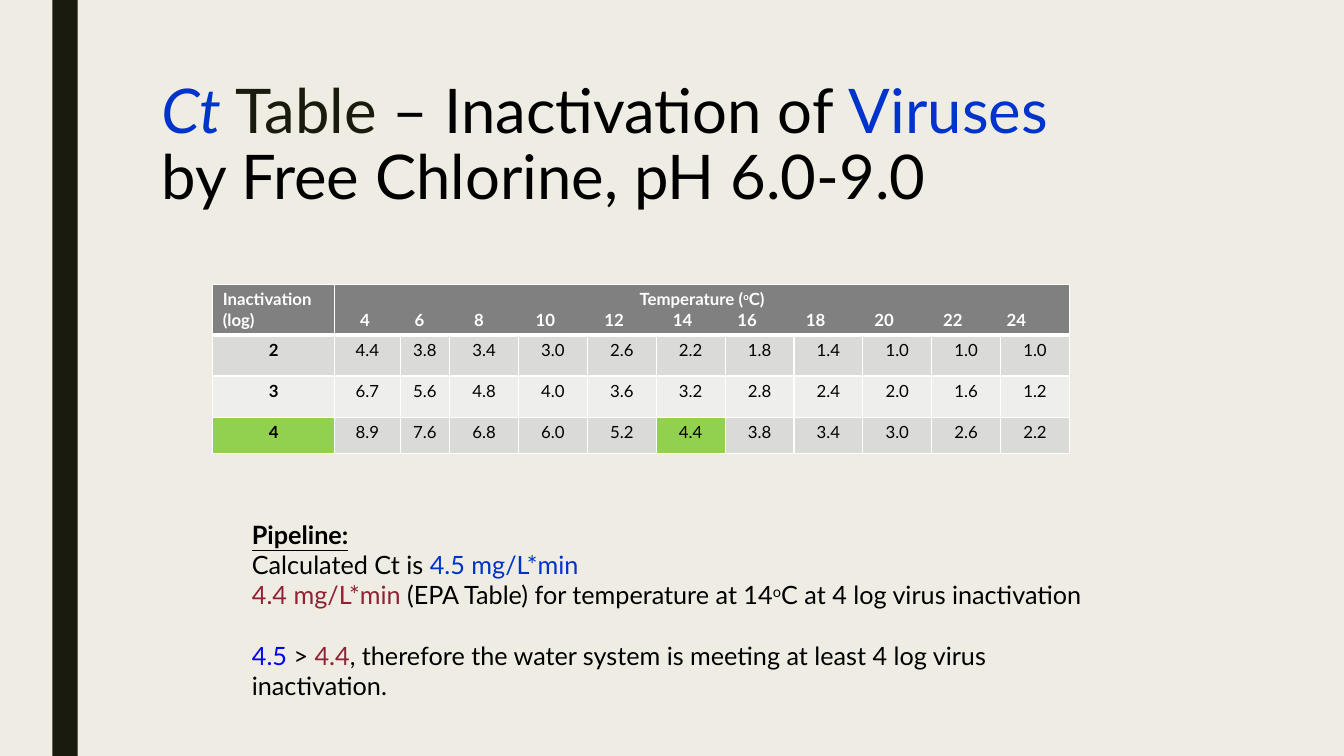
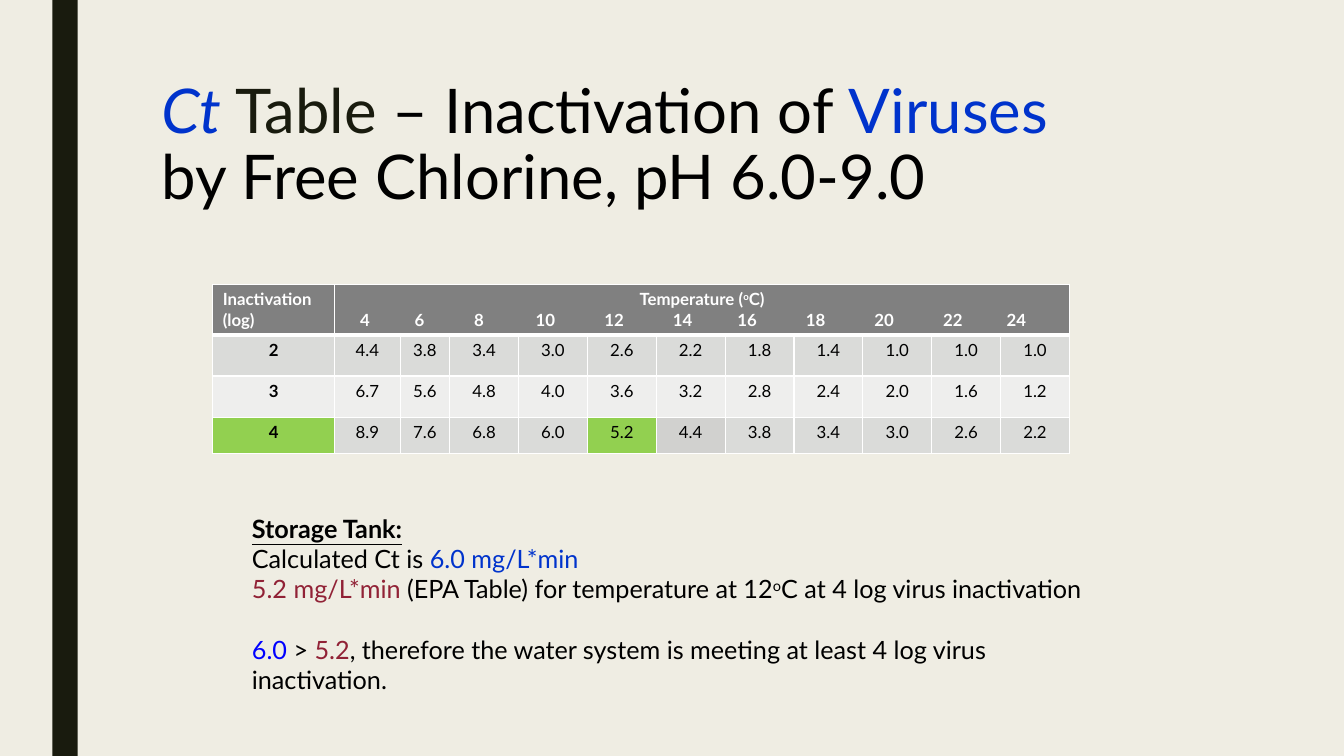
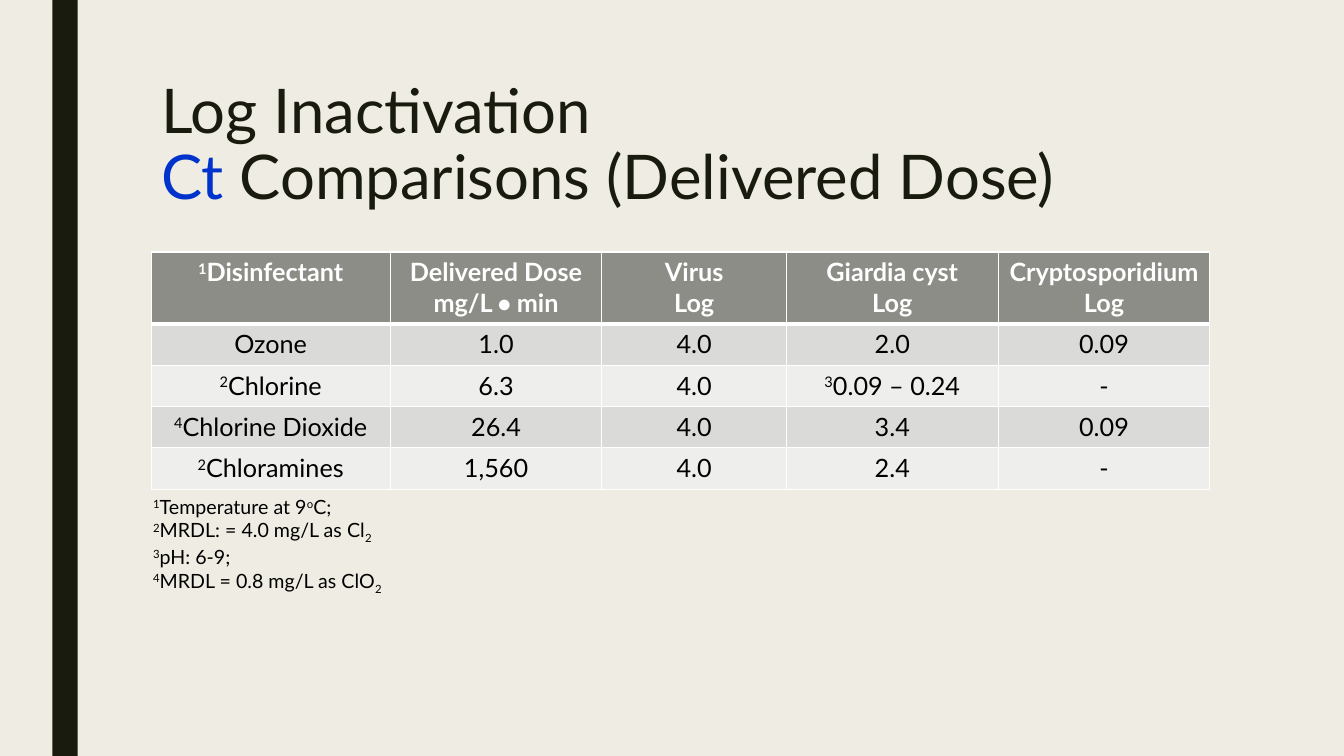
"""Build three slides on Ct values and log inactivation."""
from lxml.etree import SubElement
from pptx import Presentation
from pptx.dml.color import RGBColor
from pptx.enum.shapes import MSO_SHAPE as Shape
from pptx.enum.text import MSO_ANCHOR as Anchor, MSO_AUTO_SIZE as Auto, PP_ALIGN as Align
from pptx.oxml.ns import qn
from pptx.util import Inches, Pt

hue = RGBColor.from_string
DARK, BLACK, WHITE = "191B0E", "000000", "FFFFFF"
GREY, PALE, GREEN = "DADBD9", "EEEEED", "92D050"
BLUE, RED, INK = {"color": "0033CC"}, {"color": "912236"}, {"color": BLACK}
SUP, SUB = {"base": "30000"}, {"base": "-25000"}


def write(frame, lines, align=Align.LEFT, **base):
    """Fill a text frame with lines made of strings and (string, format) pairs."""
    for n, line in enumerate(lines):
        para = frame.paragraphs[0] if n == 0 else frame.add_paragraph()
        para.alignment = align
        for part in [line] if isinstance(line, str) else line:
            if part == "\n":
                para.add_line_break()
                continue
            text, form = (part, {}) if isinstance(part, str) else part
            run = para.add_run()
            run.text = text
            for key, val in {"name": "Lato", **base, **form}.items():
                if key == "color":
                    run.font.color.rgb = hue(val)
                elif key == "base":
                    run._r.get_or_add_rPr().set("baseline", val)
                else:
                    setattr(run.font, key, val)


def grid(slide, spot, cols, rows, head):
    """Add a table with white borders, a header fill and banded rows."""
    size = [Inches(v) for v in (*spot, sum(cols), sum(rows))]
    table = slide.shapes.add_table(len(rows), len(cols), *size).table
    table.first_row = table.horz_banding = False
    for col, wide in zip(table.columns, cols):
        col.width = Inches(wide)
    for r, high in enumerate(rows):
        table.rows[r].height = Inches(high)
        for cell in table.rows[r].cells:
            props = cell._tc.get_or_add_tcPr()
            for side in "LRTB":
                thick = (r, side) in ((0, "B"), (1, "T"))
                line = SubElement(props, qn("a:ln" + side), w=str(Pt(3 if thick else 1)))
                SubElement(SubElement(line, qn("a:solidFill")), qn("a:srgbClr"), val=WHITE)
            cell.fill.solid()
            cell.fill.fore_color.rgb = hue(head if r == 0 else GREY if r % 2 else PALE)
    return table


prs = Presentation()
prs.slide_width, prs.slide_height = Inches(13.33), Inches(7.5)
master, layout = prs.slide_master, prs.slide_layouts[5]
master.background.fill.solid()
master.background.fill.fore_color.rgb = hue("EFEDE3")
spot = {"left": 1.5, "top": 0.75, "width": 10.5, "height": 1.62}
for key, val in spot.items():
    setattr(layout.placeholders[0], key, Inches(val))

virus = [[("Ct ", {**BLUE, "italic": True}), "Table ", ("– Inactivation of ", INK),
          ("Viruses", BLUE), "\n", ("by Free Chlorine, pH 6.0-9.0", INK)]]
dose = [["Log Inactivation ", "\n", ("Ct", BLUE), " Comparisons (Delivered Dose)"]]
slides = []
for title in (virus, virus, dose):
    slide = prs.slides.add_slide(layout)
    frame = slide.shapes.title.text_frame
    frame.auto_size, frame.vertical_anchor = Auto.NONE, Anchor.TOP
    write(frame, title, size=Pt(44), color=DARK)
    frame.paragraphs[0].line_spacing = 0.89
    slides.append(slide)

band = slides[0].shapes.add_shape(Shape.RECTANGLE, Inches(0.52), 0, Inches(0.25), Inches(7.5))
band.shadow.inherit = False
band.fill.solid()
band.fill.fore_color.rgb = hue(DARK)
band.line.fill.background()
master.shapes._spTree.append(band._element)

cols = [1.21, 0.65, 0.49] + [6.15 / 9] * 9
temps = range(4, 25, 2)
stops = [0.2, 0.74, 1.33, 1.99, 2.67, 3.35, 3.99, 4.67, 5.35, 6.03, 6.66]
logs = ["2 4.4 3.8 3.4 3.0 2.6 2.2 1.8 1.4 1.0 1.0 1.0",
        "3 6.7 5.6 4.8 4.0 3.6 3.2 2.8 2.4 2.0 1.6 1.2",
        "4 8.9 7.6 6.8 6.0 5.2 4.4 3.8 3.4 3.0 2.6 2.2"]
cases = [("Pipeline:", "4.5", "4.4", 14, 5.1, {0: GREEN, 6: GREEN}),
         ("Storage Tank:", "6.0", "5.2", 12, 5.04, {0: GREEN, 5: GREEN, 6: "D1D1CF"})]

for slide, (name, calc, need, temp, top, marks) in zip(slides, cases):
    table = grid(slide, (2.11, 2.82), cols, [0.5, 0.41, 0.41, 0.36], "808080")
    table.cell(0, 1).merge(table.cell(0, 11))
    bold = {"size": Pt(12), "bold": True, "color": WHITE}
    write(table.cell(0, 0).text_frame, ["Inactivation (log)"], **bold)
    frame = table.cell(0, 1).text_frame
    scale = "".join(f"\t{t}" for t in temps)
    write(frame, [["Temperature (", ("o", SUP), "C)"], scale], **bold)
    frame.paragraphs[0].alignment = Align.CENTER
    tabs = SubElement(frame.paragraphs[1]._p.get_or_add_pPr(), qn("a:tabLst"))
    for stop in stops:
        SubElement(tabs, qn("a:tab"), pos=str(Inches(stop)), algn="ctr")
    for r, row in enumerate(logs, 1):
        for c, val in enumerate(row.split()):
            write(table.cell(r, c).text_frame, [val], Align.CENTER,
                  size=Pt(12), bold=c == 0, color=BLACK)
    for c, fill in marks.items():
        table.cell(3, c).fill.fore_color.rgb = hue(fill)

    box = slide.shapes.add_textbox(Inches(2.4), Inches(top), Inches(8.69), Inches(1.62))
    frame = box.text_frame
    frame.word_wrap = True
    write(frame, [
        [(name, {"bold": True, "underline": True})],
        ["Calculated Ct is ", (f"{calc} mg/L*min", BLUE)],
        [(f"{need} mg/L*min ", RED), f"(EPA Table) for temperature at {temp}",
         ("o", SUP), "C at 4 log virus inactivation"],
        [(calc, {"color": "0000FF"}), " > ", (need, RED),
         ", therefore the water system is meeting at least 4 log virus inactivation."],
    ], size=Pt(18), color=BLACK)
    frame.paragraphs[3].space_before = Pt(21.6)

heads = [[[("1", SUP), "Disinfectant"]],
         ["Delivered Dose", ["mg/L ", ("•", {"name": "Calibri"}), " min"]],
         ["Virus", "Log"], ["Giardia cyst", "Log"], ["Cryptosporidium", "Log"]]
doses = [["Ozone", "1.0", "4.0", "2.0", "0.09"],
         [[("2", SUP), "Chlorine"], "6.3", "4.0", [("3", SUP), "0.09 – 0.24"], "-"],
         [[("4", SUP), "Chlorine Dioxide"], "26.4", "4.0", "3.4", "0.09"],
         [[("2", SUP), "Chloramines"], "1,560", "4.0", "2.4", "-"]]
table = grid(slides[2], (1.5, 2.5), [2.37, 2.1, 1.83, 2.1, 2.1], [0.7] + [0.41] * 4, "8C8D86")
for c, lines in enumerate(heads):
    write(table.cell(0, c).text_frame, lines, Align.CENTER,
          size=Pt(18), bold=True, color=WHITE)
for r, row in enumerate(doses, 1):
    for c, val in enumerate(row):
        write(table.cell(r, c).text_frame, [val], Align.CENTER, size=Pt(18), color=BLACK)

notes = slides[2].shapes.add_textbox(Inches(1.42), Inches(4.86), Inches(2.6), Inches(1.04))
notes.text_frame.word_wrap = True
write(notes.text_frame, [
    [("1", SUP), "Temperature at 9", ("o", SUP), "C;"],
    [("2", SUP), "MRDL: = 4.0 mg/L as Cl", ("2", SUB)],
    [("3", SUP), "pH: 6-9;"],
    [("4", SUP), "MRDL = 0.8 mg/L as ClO", ("2", SUB)],
], size=Pt(14), color=BLACK)

prs.save("out.pptx")
